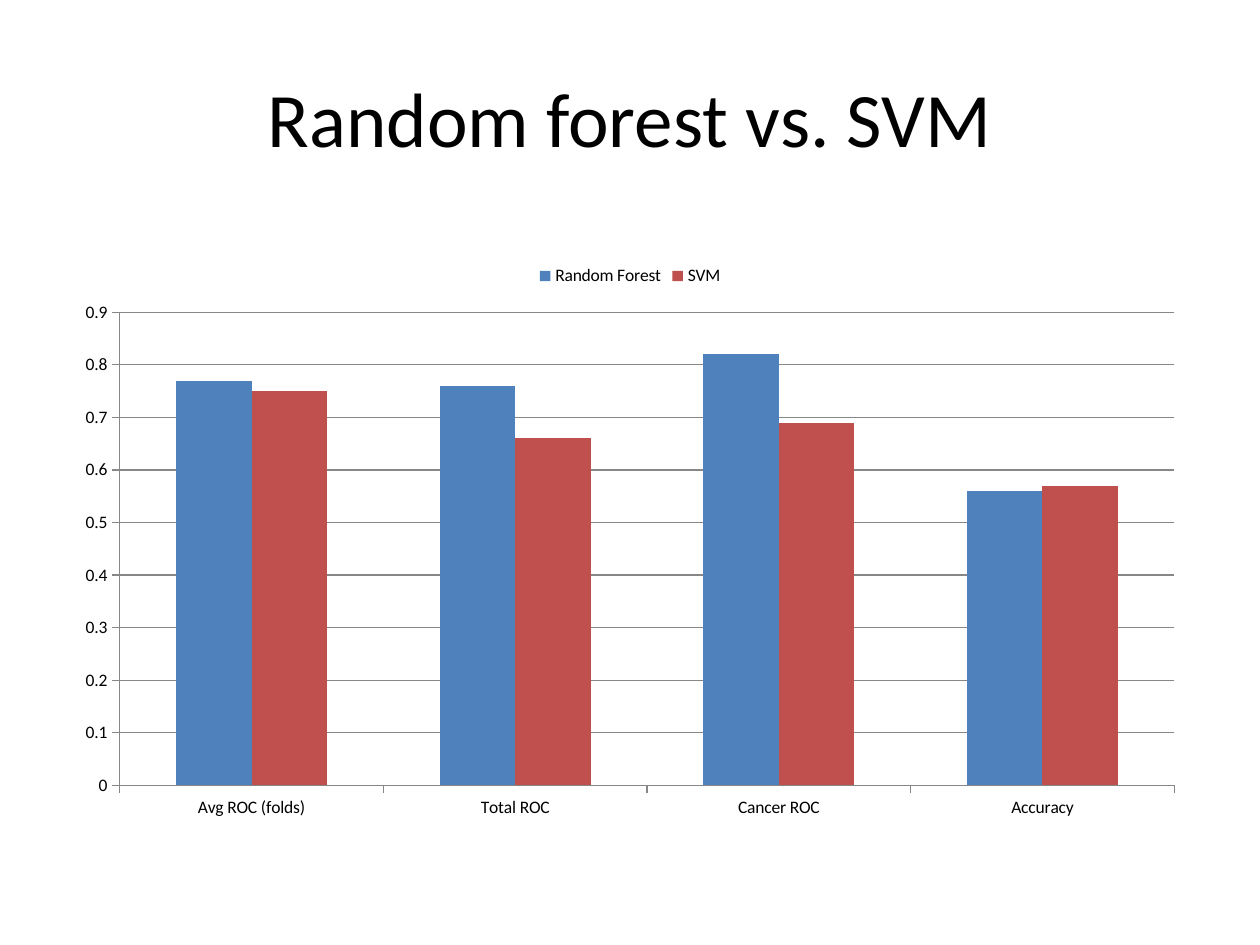
from pptx import Presentation
from pptx.chart.data import CategoryChartData
from pptx.dml.color import RGBColor
from pptx.enum.chart import XL_CHART_TYPE as ChartType
from pptx.enum.chart import XL_LEGEND_POSITION as LegendPosition
from pptx.enum.chart import XL_TICK_MARK as TickMark
from pptx.enum.text import MSO_ANCHOR as Anchor
from pptx.enum.text import PP_ALIGN as Align
from pptx.util import Inches, Pt

BLACK, GRAY = "000000", "878787"
BLUE, RED = "4F81BD", "C0504D"


def color(hex_code):
    return RGBColor.from_string(hex_code)


class SlideBuilder:
    font_name = "Calibri"

    def __init__(self, slide):
        self.slide = slide

    def style_font(self, font, size):
        font.name = self.font_name
        font.size = Pt(size)
        font.color.rgb = color(BLACK)

    def title(self, text, left, top, width, height):
        box = self.slide.shapes.add_textbox(
            Inches(left), Inches(top), Inches(width), Inches(height))
        frame = box.text_frame
        frame.word_wrap = True
        frame.vertical_anchor = Anchor.MIDDLE
        paragraph = frame.paragraphs[0]
        paragraph.alignment = Align.CENTER
        run = paragraph.add_run()
        run.text = text
        self.style_font(run.font, 44)

    def column_chart(self, categories, series, left, top, width, height):
        data = CategoryChartData()
        data.categories = categories
        for name, values, _ in series:
            data.add_series(name, values)
        chart = self.slide.shapes.add_chart(
            ChartType.COLUMN_CLUSTERED, Inches(left), Inches(top),
            Inches(width), Inches(height), data).chart
        self.style_font(chart.font, 10)
        chart.has_title = False

        # Legend
        chart.has_legend = True
        chart.legend.position = LegendPosition.TOP
        chart.legend.include_in_layout = False

        # Columns
        plot = chart.plots[0]
        plot.gap_width = 150
        plot.overlap = 0
        plot.vary_by_categories = False
        for columns, (_, _, fill) in zip(plot.series, series):
            columns.format.fill.solid()
            columns.format.fill.fore_color.rgb = color(fill)

        # Axes and gridlines
        scores = chart.value_axis
        scores.minimum_scale, scores.maximum_scale = 0, 0.9
        scores.major_unit = 0.1
        scores.has_major_gridlines = True
        scores.tick_labels.number_format = "General"
        scores.tick_labels.number_format_is_linked = False
        for axis in (chart.category_axis, scores):
            axis.major_tick_mark = TickMark.OUTSIDE
            axis.minor_tick_mark = TickMark.NONE
        for part in (chart.category_axis, scores, scores.major_gridlines):
            part.format.line.color.rgb = color(GRAY)
            part.format.line.width = Pt(0.75)


def main():
    presentation = Presentation()
    presentation.slide_width = Inches(10)
    presentation.slide_height = Inches(7.5)
    builder = SlideBuilder(
        presentation.slides.add_slide(presentation.slide_layouts[6]))

    # Heading
    builder.title("Random forest vs. SVM", 0.5, 0.3, 9, 1.25)

    # Model comparison
    metrics = ["Avg ROC (folds)", "Total ROC", "Cancer ROC", "Accuracy"]
    models = [
        ("Random Forest", (0.77, 0.76, 0.82, 0.56), BLUE),
        ("SVM", (0.75, 0.66, 0.69, 0.57), RED),
    ]
    builder.column_chart(metrics, models, 0.5, 2, 9, 4.58)

    presentation.save("out.pptx")


if __name__ == "__main__":
    main()
